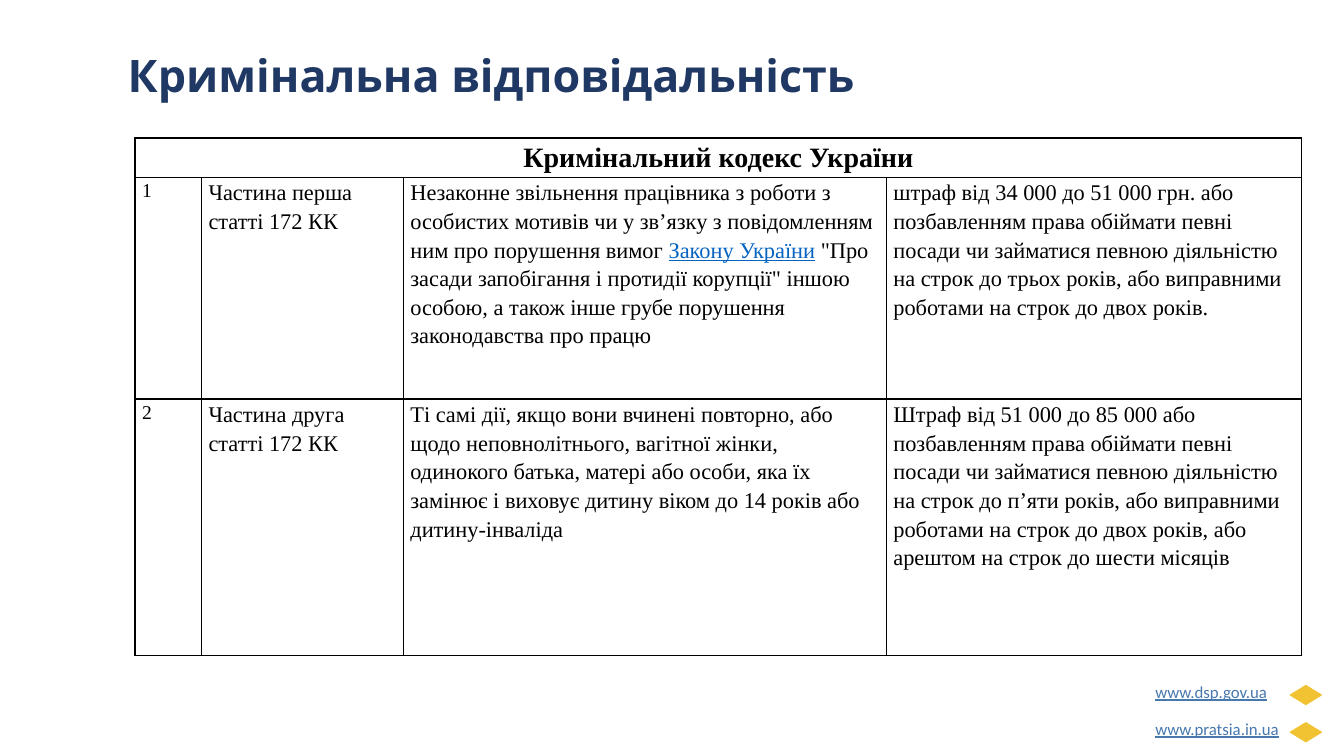
from lxml.etree import SubElement
from pptx import Presentation
from pptx.dml.color import RGBColor
from pptx.enum.shapes import MSO_SHAPE as Preset
from pptx.enum.text import MSO_AUTO_SIZE as AutoSize, PP_ALIGN as Align
from pptx.oxml.ns import qn
from pptx.util import Pt

SERIF = "Times New Roman"
NAVY, BLACK, GOLD = "203864", "000000", "F1C232"
LINK, SITE = "0563C1", "4778AE"


def color(value):
    return RGBColor.from_string(value)


def write(paragraph, text, font=SERIF, size=16, ink=BLACK, bold=False, underline=False):
    run = paragraph.add_run()
    run.text = text
    run.font.name = font
    run.font.size = Pt(size)
    run.font.bold = bold
    run.font.underline = underline
    run.font.color.rgb = color(ink)


class SlideBuilder:
    def __init__(self, slide, border=BLACK, border_width=1, spacing=1.15):
        self.slide = slide
        self.border = border
        self.border_width = border_width
        self.spacing = spacing

    def label(self, left, top, width, height, text, inset=None, **style):
        frame = self.slide.shapes.add_textbox(Pt(left), Pt(top), Pt(width), Pt(height)).text_frame
        frame.word_wrap = True
        frame.auto_size = AutoSize.SHAPE_TO_FIT_TEXT
        if inset is not None:
            frame.margin_left = frame.margin_right = Pt(inset)
            frame.margin_top = frame.margin_bottom = Pt(inset)
        write(frame.paragraphs[0], text, **style)

    def diamond(self, left, top, width, height, fill):
        marker = self.slide.shapes.add_shape(
            Preset.FLOWCHART_DECISION, Pt(left), Pt(top), Pt(width), Pt(height))
        marker.shadow.inherit = False
        marker.fill.solid()
        marker.fill.fore_color.rgb = color(fill)
        marker.line.color.rgb = color(fill)
        marker.line.width = Pt(0.75)

    def table(self, left, top, widths, heights):
        table = self.slide.shapes.add_table(
            len(heights), len(widths), Pt(left), Pt(top), Pt(sum(widths)), Pt(sum(heights))).table
        table.first_row = table.horz_banding = False
        for column, width in zip(table.columns, widths):
            column.width = Pt(width)
        for row, height in zip(table.rows, heights):
            row.height = Pt(height)
        for cell in table.iter_cells():
            self.outline(cell)
        return table

    def outline(self, cell):
        cell.margin_left = cell.margin_right = Pt(5)
        cell.margin_top = cell.margin_bottom = 0
        properties = cell._tc.get_or_add_tcPr()
        for side in ("a:lnL", "a:lnR", "a:lnT", "a:lnB"):
            line = SubElement(properties, qn(side), w=str(Pt(self.border_width)))
            fill = SubElement(line, qn("a:solidFill"))
            SubElement(fill, qn("a:srgbClr"), val=self.border)
        cell.fill.background()

    def fill_cell(self, cell, *parts, align=None, **style):
        paragraph = cell.text_frame.paragraphs[0]
        paragraph.line_spacing = self.spacing
        paragraph.alignment = align
        for part in parts:
            text, extra = part if isinstance(part, tuple) else (part, {})
            write(paragraph, text, **{**style, **extra})


ARTICLES = [
    (
        "Частина перша статті 172 КК",
        [
            "Незаконне звільнення працівника з роботи з особистих мотивів чи у зв’язку "
            "з повідомленням ним про порушення вимог ",
            ("Закону України", {"ink": LINK, "underline": True}),
            " \"Про засади запобігання і протидії корупції\" іншою особою, а також інше "
            "грубе порушення законодавства про працю",
        ],
        "штраф від 34 000 до 51 000 грн. або позбавленням права обіймати певні посади "
        "чи займатися певною діяльністю на строк до трьох років, або виправними "
        "роботами на строк до двох років.",
    ),
    (
        "Частина друга статті 172 КК",
        [
            "Ті самі дії, якщо вони вчинені повторно, або щодо неповнолітнього, вагітної "
            "жінки, одинокого батька, матері або особи, яка їх замінює і виховує дитину "
            "віком до 14 років або дитину-інваліда",
        ],
        "Штраф від 51 000 до 85 000 або позбавленням права обіймати певні посади чи "
        "займатися певною діяльністю на строк до п’яти років, або виправними роботами "
        "на строк до двох років, або арештом на строк до шести місяців",
    ),
]
SITES = [("www.dsp.gov.ua", 111.5), ("www.pratsia.in.ua", 125.5)]


def main():
    deck = Presentation()
    deck.slide_width, deck.slide_height = Pt(960), Pt(540)
    page = SlideBuilder(deck.slides.add_slide(deck.slide_layouts[6]))

    for index, (site, width) in enumerate(SITES):
        shift = index * 26.6
        page.diamond(921.6, 489.6 + shift, 22.3, 13.7, GOLD)
        page.label(815.8, 479.5 + shift, width, 33.8, site, inset=9.4,
                   font="Calibri", size=12, ink=SITE, underline=True)

    page.label(84.2, 30.2, 717, 46, "Кримінальна відповідальність",
               font="Open Sans", size=32, ink=NAVY, bold=True)

    penalties = page.table(96.5, 98.6, [47.5, 144.2, 345, 296.8], [28, 158.4, 183])
    penalties.cell(0, 0).merge(penalties.cell(0, 3))
    page.fill_cell(penalties.cell(0, 0), "Кримінальний кодекс України",
                   align=Align.CENTER, size=20, bold=True)
    for number, (article, offence, penalty) in enumerate(ARTICLES, 1):
        page.fill_cell(penalties.cell(number, 0), str(number), size=14)
        page.fill_cell(penalties.cell(number, 1), article)
        page.fill_cell(penalties.cell(number, 2), *offence)
        page.fill_cell(penalties.cell(number, 3), penalty)

    deck.save("out.pptx")


if __name__ == "__main__":
    main()
